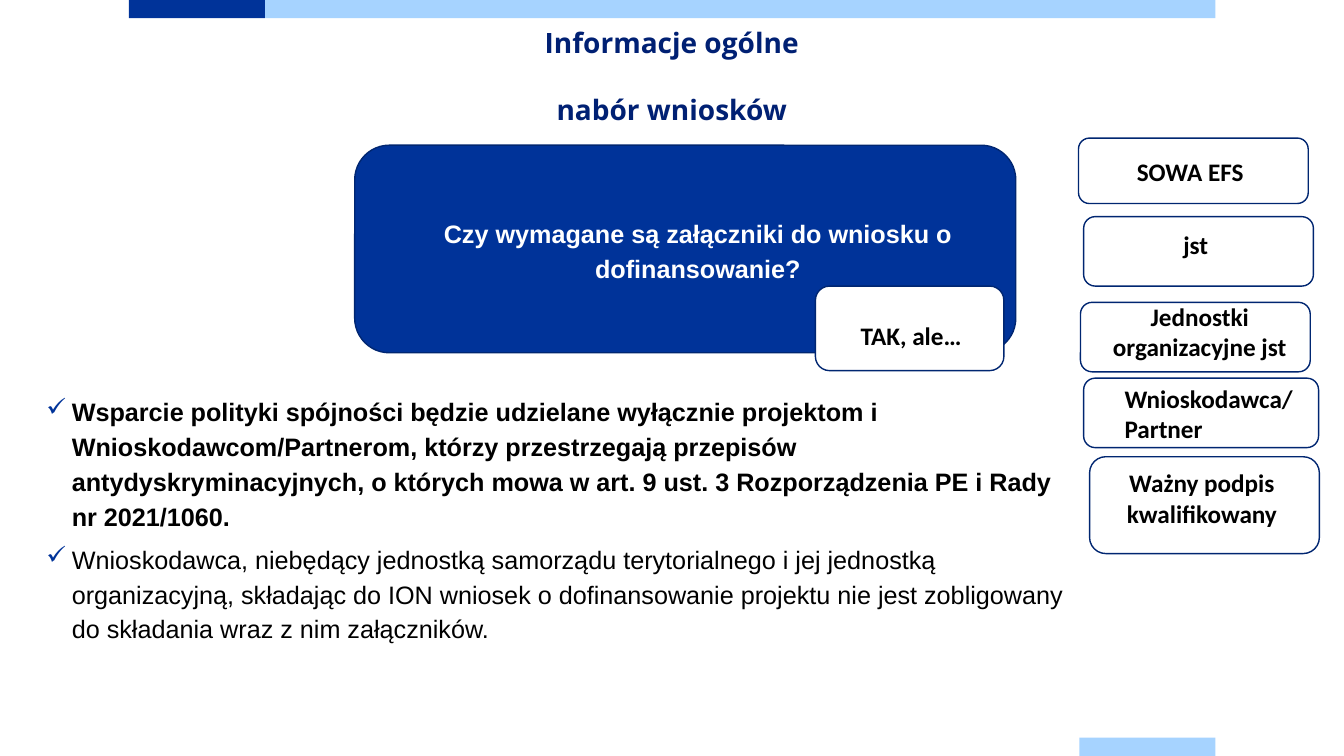
import pptx
import pptx.dml.color
import pptx.enum.shapes
import pptx.enum.text
import pptx.util
from lxml import etree

Cm = pptx.util.Cm
Pt = pptx.util.Pt
Align = pptx.enum.text.PP_ALIGN
Anchor = pptx.enum.text.MSO_ANCHOR
Preset = pptx.enum.shapes.MSO_SHAPE

NAVY, SKY, OUTLINE, TITLE = "003399", "A6D3FF", "002671", "002073"


def color(value):
    return pptx.dml.color.RGBColor.from_string(value)


def write(para, text, font="Calibri", size=18, bold=True, ink="000000",
          align=Align.LEFT, spacing=None, before=0, after=0, indent=0, bullet=None):
    para.alignment = align
    para.space_before, para.space_after = Pt(before), Pt(after)
    if spacing:
        para.line_spacing = spacing
    props = para._p.get_or_add_pPr()
    if indent:
        props.set("marL", str(Cm(indent)))
    if bullet:
        props.set("indent", str(-Cm(indent)))
        tint = etree.SubElement(props, pptx.oxml.ns.qn("a:buClr"))
        etree.SubElement(tint, pptx.oxml.ns.qn("a:srgbClr")).set("val", NAVY)
        etree.SubElement(props, pptx.oxml.ns.qn("a:buChar")).set("char", bullet)
    span = para.add_run()
    span.text = text
    span.font.name, span.font.size, span.font.bold = font, Pt(size), bold
    span.font.color.rgb = color(ink)


class Sheet:
    """Holds the current page and draws its elements in one style."""

    def __init__(self, page):
        self.page = page

    def shape(self, place, preset, fill=None, line=None):
        box = self.page.shapes.add_shape(preset, *map(Cm, place))
        box.shadow.inherit = False
        if fill:
            box.fill.solid()
            box.fill.fore_color.rgb = color(fill)
        else:
            box.fill.background()
        if line:
            box.line.color.rgb = color(line)
            box.line.width = Pt(1)
        else:
            box.line.fill.background()
        return box

    def bar(self, place, fill):
        return self.shape(place, Preset.RECTANGLE, fill)

    def frame(self, place, fill=None):
        return self.shape(place, Preset.ROUNDED_RECTANGLE, fill, OUTLINE)

    def text(self, place, lines, inset=True, **style):
        frame = self.page.shapes.add_textbox(*map(Cm, place)).text_frame
        frame.word_wrap = True
        if not inset:
            frame.margin_left = frame.margin_right = 0
            frame.margin_top = frame.margin_bottom = 0
        for number, (line, extra) in enumerate(lines):
            para = frame.add_paragraph() if number else frame.paragraphs[0]
            write(para, line, **{**style, **extra})


def main():
    deck = pptx.Presentation()
    deck.slide_width, deck.slide_height = Cm(33.87), Cm(19.05)
    sheet = Sheet(deck.slides.add_slide(deck.slide_layouts[6]))

    sheet.bar((3.25, 0, 3.43, 0.46), NAVY)
    sheet.bar((6.68, 0, 23.95, 0.46), SKY)
    sheet.bar((27.2, 18.59, 3.43, 0.46), SKY)

    sheet.text((3.25, 0.64, 27.36, 2.72),
               [("Informacje ogólne", {}), ("nabór wniosków", {"before": 24})],
               inset=False, font="Open Sans", size=20, ink=TITLE,
               align=Align.CENTER, spacing=Pt(24))

    sheet.text((1.17, 9.88, 25.78, 7.67), [
        ("Wsparcie polityki spójności będzie udzielane wyłącznie projektom i "
         "Wnioskodawcom/Partnerom, którzy przestrzegają przepisów "
         "antydyskryminacyjnych, o których mowa w art. 9 ust. 3 "
         "Rozporządzenia PE i Rady nr 2021/1060.", {}),
        ("Wnioskodawca, niebędący jednostką samorządu terytorialnego i jej "
         "jednostką organizacyjną, składając do ION wniosek o dofinansowanie "
         "projektu nie jest zobligowany do składania wraz z nim załączników.",
         {"bold": False, "before": 3}),
    ], inset=False, font="Arial", spacing=1.15, after=3, indent=0.64, bullet="✓")

    question = sheet.frame((8.94, 3.66, 16.66, 5.23), NAVY).text_frame
    question.word_wrap = True
    question.vertical_anchor = Anchor.MIDDLE
    write(question.paragraphs[0],
          "Czy wymagane są załączniki do wniosku o dofinansowanie?",
          font="Arial", ink="FFFFFF", align=Align.CENTER, spacing=1.15,
          after=2, indent=0.64)

    left, center = Align.LEFT, Align.CENTER
    labels = [
        ((27.18, 3.48, 5.79, 1.65), None, (28.4, 3.81, 5.4, 1.02), left, ["SOWA EFS"]),
        ((27.31, 5.46, 5.79, 1.75), None, (29.57, 5.66, 2.13, 1.07), left, ["jst"]),
        ((27.23, 7.62, 5.79, 1.75), None, (27.48, 7.47, 5.51, 1.8), center,
         ["Jednostki", "organizacyjne jst"]),
        ((27.31, 9.53, 5.92, 1.75), None, (28.09, 9.53, 5.75, 1.8), left,
         ["Wnioskodawca/", "Partner"]),
        ((27.46, 11.51, 5.79, 2.44), None, (26.9, 11.66, 6.78, 1.8), center,
         ["Ważny podpis kwalifikowany"]),
        ((20.55, 7.21, 4.75, 2.13), "FFFFFF", (21.44, 7.95, 5.79, 1.02), left,
         ["TAK, ale…"]),
    ]
    for outline, fill, place, align, lines in labels:
        sheet.frame(outline, fill)
        sheet.text(place, [(line, {}) for line in lines], align=align)

    deck.save("out.pptx")


if __name__ == "__main__":
    main()
